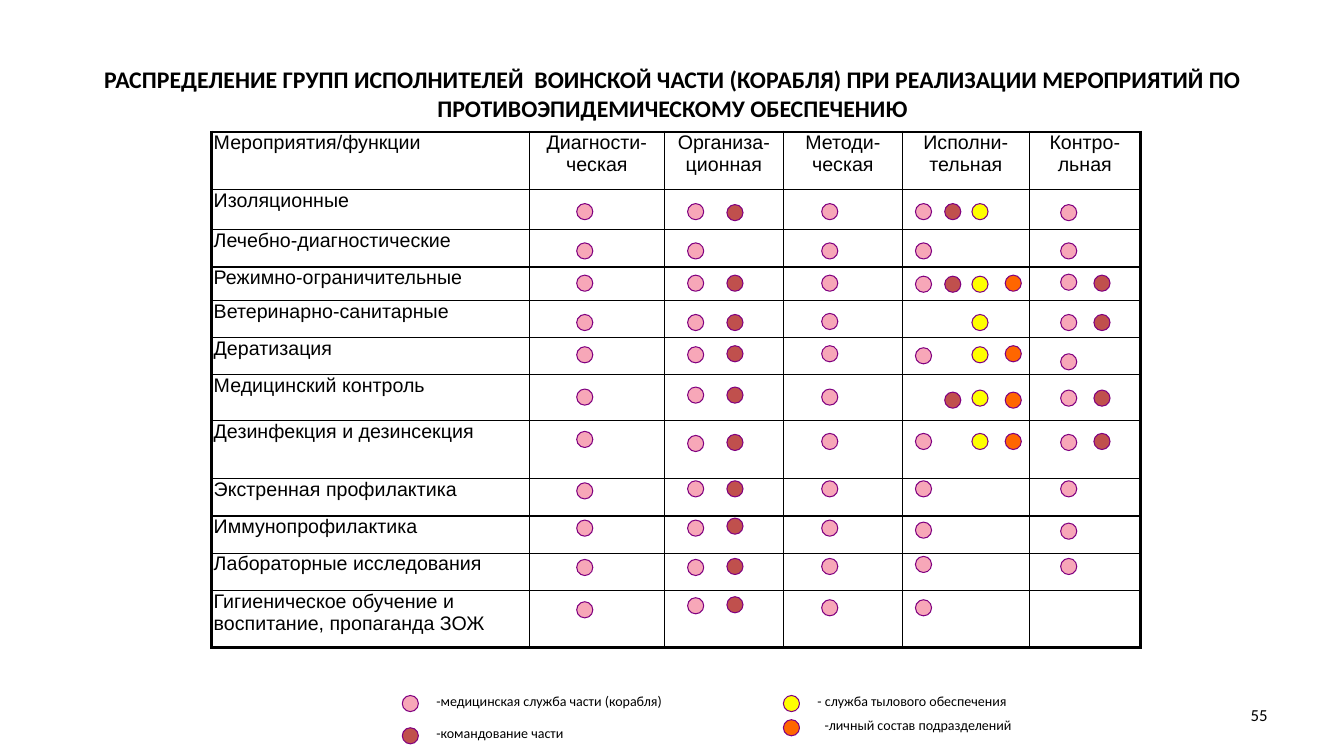
from dataclasses import dataclass
from itertools import accumulate

import pptx
import pptx.dml.color
import pptx.enum.shapes
import pptx.enum.text
import pptx.oxml
import pptx.oxml.ns
import pptx.util

PX = 9144  # EMU in one px, 100 px to the inch
ALIGN = pptx.enum.text.PP_ALIGN
ANCHOR = pptx.enum.text.MSO_ANCHOR


@dataclass(frozen=True)
class Theme:
    text: str = "000000"
    paper: str = "FFFFFF"
    dot_line: str = "800080"
    medical: str = "F7A7B8"
    command: str = "C0504D"
    logistics: str = "FFFF00"
    personnel: str = "FF6600"
    font: str = "Calibri"
    table_font: str = "Arial"
    title_size: float = 17
    table_size: float = 14
    legend_size: float = 10
    number_size: float = 12
    thin: float = 1
    thick: float = 2.25


T = Theme()
DOT = 16

TITLE = ("РАСПРЕДЕЛЕНИЕ ГРУПП ИСПОЛНИТЕЛЕЙ  ВОИНСКОЙ ЧАСТИ (КОРАБЛЯ) "
         "ПРИ РЕАЛИЗАЦИИ МЕРОПРИЯТИЙ ПО ПРОТИВОЭПИДЕМИЧЕСКОМУ ОБЕСПЕЧЕНИЮ")
HEADERS = ["Мероприятия/функции", "Диагности-ческая", "Организа-ционная",
           "Методи-ческая", "Исполни-тельная", "Контро-льная"]
MEASURES = ["Изоляционные", "Лечебно-диагностические", "Режимно-ограничительные",
            "Ветеринарно-санитарные", "Дератизация", "Медицинский контроль",
            "Дезинфекция и дезинсекция", "Экстренная профилактика",
            "Иммунопрофилактика", "Лабораторные исследования",
            "Гигиеническое обучение и воспитание, пропаганда ЗОЖ"]
COLS = [315, 134, 118, 118, 126, 110]
ROWS = [57, 40, 37, 33, 37, 37, 45, 58, 37, 37, 37, 57]

# Dot columns: x from the table's left, colour, y from the top of each measure's row
DOT_COLUMNS = [
    (362, T.medical, [14, 13, 8, 14, 9, 14, 11, 4, 4, 6, 11]),
    (472, T.medical, [14, 13, 8, 14, 9, 12, 15, 2, 4, 6, 7]),
    (511, T.command, [15, None, 8, 14, 8, 12, 14, 2, 2, 5, 6]),
    (605, T.medical, [14, 13, 8, 13, 8, 14, 13, 2, 4, 5, 9]),
    (698, T.medical, [14, 13, 9, None, 10, None, 13, 2, 6, 3, 9]),
    (727, T.command, [14, None, 9, None, None, 17]),
    (754, T.logistics, [14, None, 9, 14, 9, 15, 13]),
    (787, T.personnel, [None, None, 8, None, 8, 17, 13]),
    (842, T.medical, [15, 13, 7, 14, 16, 15, 14, 2, 7, 5]),
    (875, T.command, [None, None, 8, 14, None, 15, 13]),
]

# Legend: dot x, y and label x, y from the legend's corner, label width, wrap
LEGEND = [
    (T.medical, 0, 8, 24, 0, 247, False, "-медицинская служба части (корабля)"),
    (T.command, 0, 40, 24, 32, 157, True, "-командование части"),
    (T.logistics, 378, 8, 402, 0, 210, False, "- служба тылового обеспечения"),
    (T.personnel, 378, 32, 409, 24, 209, False, "-личный состав подразделений"),
]


def rgb(value):
    return pptx.dml.color.RGBColor.from_string(value)


def style(p, size, font=T.font, align=ALIGN.LEFT, bold=False):
    p.alignment = align
    p.font.size = pptx.util.Pt(size)
    p.font.name = font
    p.font.bold = bold
    p.font.color.rgb = rgb(T.text)


def add_text(s, box, text, size, wrap=True, anchor=ANCHOR.MIDDLE, **look):
    tf = s.shapes.add_textbox(*(v * PX for v in box)).text_frame
    tf.word_wrap = wrap
    tf.vertical_anchor = anchor
    p = tf.paragraphs[0]
    p.text = text
    style(p, size, **look)


def add_dot(s, x, y, color):
    sp = s.shapes.add_shape(pptx.enum.shapes.MSO_SHAPE.OVAL,
                            x * PX, y * PX, DOT * PX, DOT * PX)
    sp.shadow.inherit = False
    sp.fill.solid()
    sp.fill.fore_color.rgb = rgb(color)
    sp.line.color.rgb = rgb(T.dot_line)
    sp.line.width = pptx.util.Pt(0.75)


def set_borders(cell, thick_sides):
    tc_pr = cell._tc.get_or_add_tcPr()
    for i, side in enumerate("LRTB"):
        width = pptx.util.Pt(T.thick if side in thick_sides else T.thin)
        tc_pr.insert(i, pptx.oxml.parse_xml(
            f'<a:ln{side} {pptx.oxml.ns.nsdecls("a")} w="{int(width)}"><a:solidFill>'
            f'<a:srgbClr val="{T.text}"/></a:solidFill></a:ln{side}>'))


def add_table(s, left, top):
    # Grid with a thick outer frame
    table = s.shapes.add_table(len(ROWS), len(COLS), left * PX, top * PX,
                               sum(COLS) * PX, sum(ROWS) * PX).table
    table.first_row = table.horz_banding = False
    for column, width in zip(table.columns, COLS):
        column.width = width * PX
    for row, height in zip(table.rows, ROWS):
        row.height = height * PX
    for r, measure in enumerate([None] + MEASURES):
        texts = HEADERS if r == 0 else [measure] + [""] * (len(COLS) - 1)
        for c, text in enumerate(texts):
            cell = table.cell(r, c)
            cell.margin_left = 2 * PX if c == 0 else 0
            cell.margin_right = cell.margin_top = cell.margin_bottom = 0
            cell.fill.solid()
            cell.fill.fore_color.rgb = rgb(T.paper)
            edges = {"L": c == 0, "R": c == len(COLS) - 1,
                     "T": r == 0, "B": r == len(ROWS) - 1}
            set_borders(cell, [side for side, outer in edges.items() if outer])
            p = cell.text_frame.paragraphs[0]
            p.text = text
            style(p, T.table_size, T.table_font, ALIGN.CENTER if c else ALIGN.LEFT)

    # Dots of the groups that carry out each measure
    row_tops = list(accumulate(ROWS, initial=top))[1:]
    for x, color, offsets in DOT_COLUMNS:
        for row_top, offset in zip(row_tops, offsets):
            if offset is not None:
                add_dot(s, left + x, row_top + offset, color)


def add_legend(s, left, top):
    for color, dot_x, dot_y, x, y, width, wrap, label in LEGEND:
        add_dot(s, left + dot_x, top + dot_y, color)
        add_text(s, (left + x, top + y, width, 27), label, T.legend_size,
                 wrap=wrap, anchor=ANCHOR.TOP)


def main():
    prs = pptx.Presentation()
    prs.slide_width, prs.slide_height = 1333 * PX, 750 * PX
    s = prs.slides.add_slide(prs.slide_layouts[6])
    add_text(s, (67, 30, 1200, 125), TITLE, T.title_size, align=ALIGN.CENTER, bold=True)
    add_table(s, 210, 131)
    add_legend(s, 399, 682)
    # Slide number
    add_text(s, (956, 683, 311, 52), "55", T.number_size, align=ALIGN.RIGHT)
    prs.save("out.pptx")


if __name__ == "__main__":
    main()
